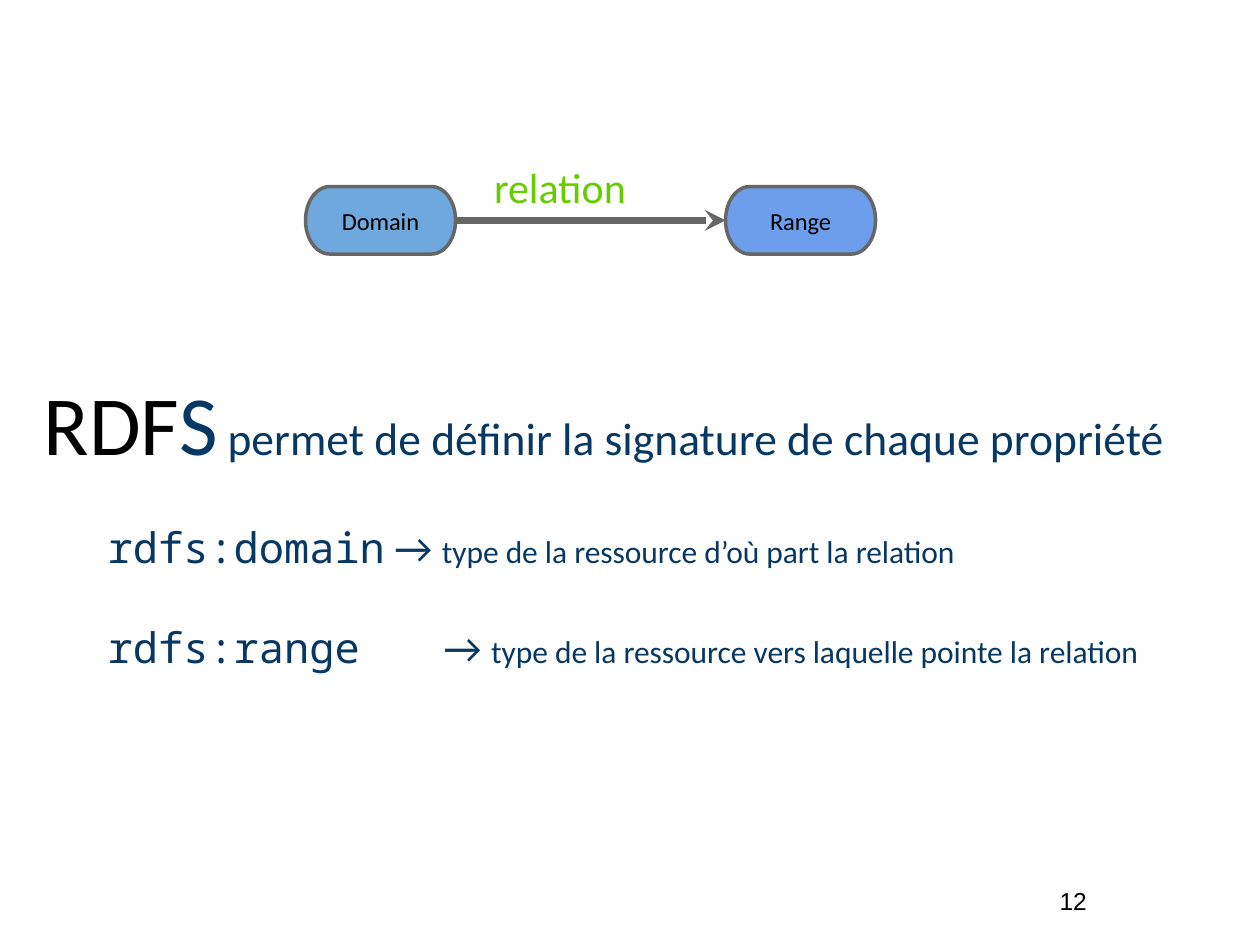
from lxml import etree
from pptx import Presentation
from pptx.dml.color import RGBColor
from pptx.enum.shapes import MSO_CONNECTOR, MSO_SHAPE
from pptx.enum.text import MSO_ANCHOR, PP_ALIGN
from pptx.oxml.ns import qn
from pptx.util import Cm, Pt

TERMINATOR = MSO_SHAPE.FLOWCHART_TERMINATOR
STRAIGHT = MSO_CONNECTOR.STRAIGHT
TOP, MIDDLE = MSO_ANCHOR.TOP, MSO_ANCHOR.MIDDLE
CENTER, LEFT = PP_ALIGN.CENTER, PP_ALIGN.LEFT

COLORS = {
    "black": "000000",
    "navy": "073763",
    "green": "66CC00",
    "gray": "666666",
    "domain": "6FA8DC",
    "range": "6D9EEB",
}
SANS, MONO, NUMBER_FONT = "Calibri", "Noto Sans Mono", "Arial"


def rgb(name):
    return RGBColor.from_string(COLORS[name])


class SlideBuilder:
    def __init__(self, slide):
        self.shapes = slide.shapes

    def prepare(self, box, inset, anchor):
        frame = box.text_frame
        frame.word_wrap = True
        frame.vertical_anchor = anchor
        frame.margin_left = frame.margin_right = Cm(inset)
        frame.margin_top = frame.margin_bottom = Cm(inset)
        return frame

    def add_spans(self, para, spans, align=LEFT):
        para.alignment = align
        for text, size, font, color in spans:
            span = para.add_run()
            span.text = text
            span.font.size = Pt(size)
            span.font.name = font
            span.font.color.rgb = rgb(color)

    def text(self, left, top, width, height, spans, inset=0.18, anchor=TOP):
        box = self.shapes.add_textbox(Cm(left), Cm(top), Cm(width), Cm(height))
        frame = self.prepare(box, inset, anchor)
        self.add_spans(frame.paragraphs[0], spans)
        return frame

    def body_paragraph(self, para, indent=0, tab=None):
        para.line_spacing = 1.6
        para.space_after = Pt(8.2)
        properties = para._p.get_or_add_pPr()
        properties.set("marL", str(Cm(indent)))
        properties.set("indent", "0")
        if tab:
            stops = etree.SubElement(properties, qn("a:tabLst"))
            etree.SubElement(stops, qn("a:tab"), pos=str(Cm(tab)), algn="l")

    def node(self, left, top, width, height, label, fill):
        box = self.shapes.add_shape(
            TERMINATOR, Cm(left), Cm(top), Cm(width), Cm(height))
        box.shadow.inherit = False
        box.fill.solid()
        box.fill.fore_color.rgb = rgb(fill)
        box.line.color.rgb = rgb("gray")
        box.line.width = Pt(1.5)
        frame = self.prepare(box, 0.18, MIDDLE)
        self.add_spans(frame.paragraphs[0], [(label, 10.5, SANS, "black")], CENTER)

    def arrow(self, start, end, y):
        connector = self.shapes.add_connector(
            STRAIGHT, Cm(start), Cm(y), Cm(end), Cm(y))
        connector.line.color.rgb = rgb("gray")
        connector.line.width = Pt(3)
        properties = connector._element.spPr
        outline = properties.find(qn("a:ln"))
        etree.SubElement(outline, qn("a:tailEnd"), type="stealth")
        etree.SubElement(properties, qn("a:effectLst"))


def main():
    deck = Presentation()
    deck.slide_width, deck.slide_height = Cm(19.05), Cm(14.28)
    page = SlideBuilder(deck.slides.add_slide(deck.slide_layouts[6]))

    # Signature of a property, then its two terms
    frame = page.text(0.48, 4.52, 18.42, 7.06, [
        ("RDF", 36, SANS, "black"),
        ("S", 36, SANS, "navy"),
        (" ", 18, SANS, "navy"),
        ("permet de définir la signature de chaque propriété", 19.5, SANS, "navy"),
    ])
    page.body_paragraph(frame.paragraphs[0])
    terms = [
        ("rdfs:domain", " → ", "type de la ressource d’où part la relation", None),
        ("rdfs:range", "\t→ ",
         "type de la ressource vers laquelle pointe la relation", 5.18),
    ]
    for term, arrow, meaning, tab in terms:
        para = frame.add_paragraph()
        page.body_paragraph(para, indent=0.97, tab=tab)
        page.add_spans(para, [
            (term, 18, MONO, "navy"),
            (arrow, 18, SANS, "navy"),
            (meaning, 13.5, SANS, "navy"),
        ])

    # Domain and range joined by the relation
    node_top, node_width, node_height = 2.82, 2.27, 1.02
    domain_left, range_left = 4.62, 10.97
    page.node(domain_left, node_top, node_width, node_height, "Domain", "domain")
    page.node(range_left, node_top, node_width, node_height, "Range", "range")
    page.arrow(domain_left + node_width, range_left, node_top + node_height / 2)
    page.text(7.29, 2.26, 3.05, 0.91, [("relation", 18, SANS, "green")])

    # Page number
    page.text(15.77, 13.06, 1.14, 1.09, [("12", 10.5, NUMBER_FONT, "black")],
              inset=0.25, anchor=MIDDLE)

    deck.save("out.pptx")


if __name__ == "__main__":
    main()
